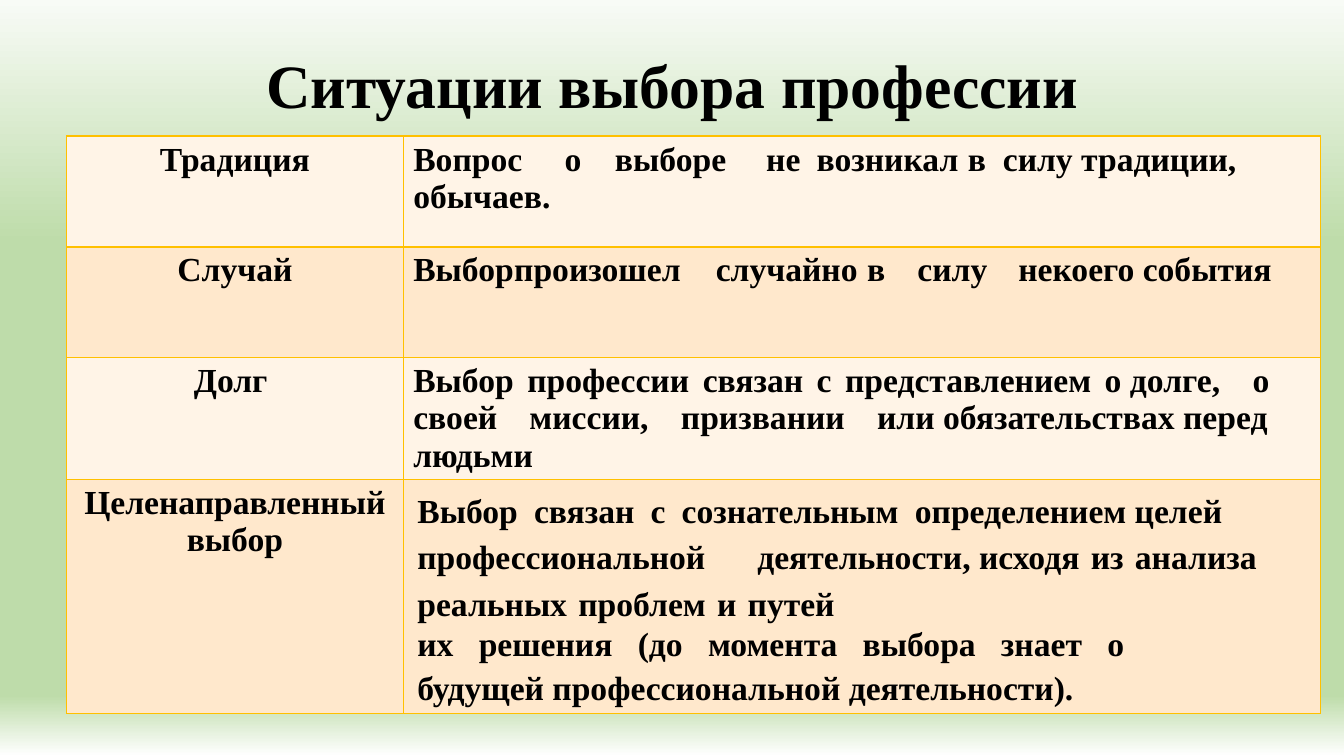
from lxml import etree
from pptx import Presentation
from pptx.dml.color import RGBColor
from pptx.enum.text import MSO_ANCHOR, PP_ALIGN
from pptx.oxml import parse_xml
from pptx.oxml.ns import qn
from pptx.util import Inches, Pt

COLORS = {
    "text": "000000", "border": "FFC000", "light": "FFF4E7", "dark": "FFE8CC",
    "top": "F8FBF6", "green": "BEDCAA", "bottom": "FFFFFF",
}
NAMESPACE = "http://schemas.openxmlformats.org/drawingml/2006/main"

# Each situation: name, row height, paragraphs.
# A paragraph is a list of (extra points per word gap, phrase).
SITUATIONS = [
    ("Традиция", 1.1, [
        [(0, "Вопрос\tо\tвыборе\tне\tвозникал\tв"), (6, " "), (0, "силу традиции, обычаев.")],
    ]),
    ("Случай", 1.1, [
        [(0, "Выбор\tпроизошел\tслучайно\tв\tсилу\tнекоего события")],
    ]),
    ("Долг ", 1.2, [
        [(3.6, "Выбор профессии связан с представлением о"), (0, " долге,"),
         (17, " о своей миссии, призвании или"), (0, " обязательствах перед людьми")],
    ]),
    ("Целенаправленный выбор", 2.32, [
        [(5.5, "Выбор связан с сознательным определением"), (0, " целей"),
         (31, " профессиональной деятельности,"), (0, " исходя"),
         (2, " из анализа реальных проблем и путей")],
        [(12, "их решения (до момента выбора знает о")],
        [(0, "будущей профессиональной деятельности).")],
    ]),
]
# Space before and line spacing of the paragraphs in the last row
GOAL_SPACING = [(1.4, Pt(33.1)), (2.5, None), (4.3, None)]


class SlideBuilder:
    def __init__(self, deck, font):
        self.page = deck.slides.add_slide(deck.slide_layouts[5])
        self.font = font

    def format_span(self, span, size):
        span.font.name = self.font
        span.font.size = Pt(size)
        span.font.bold = True
        span.font.color.rgb = RGBColor.from_string(COLORS["text"])

    def background(self, stops):
        fill = self.page.background.fill
        fill.gradient()
        gradient = self.page.background._cSld.find(".//" + qn("a:gradFill"))
        for child in list(gradient):
            gradient.remove(child)
        stop_list = etree.SubElement(gradient, qn("a:gsLst"))
        for percent, color in stops:
            stop = etree.SubElement(stop_list, qn("a:gs"), pos=str(percent * 1000))
            etree.SubElement(stop, qn("a:srgbClr"), val=COLORS[color])
        etree.SubElement(gradient, qn("a:lin"), ang="5400000", scaled="0")

    def title(self, text, left, top, width, height):
        box = self.page.shapes.title
        box.left, box.top = Inches(left), Inches(top)
        box.width, box.height = Inches(width), Inches(height)
        box.text_frame.text = text
        box.text_frame.vertical_anchor = MSO_ANCHOR.MIDDLE
        para = box.text_frame.paragraphs[0]
        para.alignment = PP_ALIGN.CENTER
        para.line_spacing = 0.9
        self.format_span(para.runs[0], 44)

    def add_span(self, para, text, gap=0):
        span = para.add_run()
        span.text = text
        self.format_span(span, 24)
        if gap:
            span.font._element.set("spc", str(round(gap * 100)))

    def add_phrase(self, para, gap, phrase):
        if not gap:
            self.add_span(para, phrase)
            return
        for index, word in enumerate(phrase.split(" ")):
            if index:
                self.add_span(para, " ", gap)
            if word:
                self.add_span(para, word)

    def style_cell(self, cell, color):
        properties = cell._tc.get_or_add_tcPr()
        for side in ("lnL", "lnR", "lnT", "lnB"):
            properties.append(parse_xml(
                f'<a:{side} xmlns:a="{NAMESPACE}" w="12700"><a:solidFill>'
                f'<a:srgbClr val="{COLORS["border"]}"/></a:solidFill></a:{side}>'))
        cell.fill.solid()
        cell.fill.fore_color.rgb = RGBColor.from_string(COLORS[color])

    def table(self, situations, left, top, column_widths):
        height = sum(row_height for _, row_height, _ in situations)
        table = self.page.shapes.add_table(
            len(situations), len(column_widths), Inches(left), Inches(top),
            Inches(sum(column_widths)), Inches(height)).table
        table.first_row = False
        for column, width in zip(table.columns, column_widths):
            column.width = Inches(width)
        for index, (name, row_height, paragraphs) in enumerate(situations):
            table.rows[index].height = Inches(row_height)
            name_cell, text_cell = table.rows[index].cells
            for cell in (name_cell, text_cell):
                self.style_cell(cell, "dark" if index % 2 else "light")
            para = name_cell.text_frame.paragraphs[0]
            para.alignment = PP_ALIGN.CENTER
            self.add_span(para, name)
            self.fill_text(text_cell.text_frame, paragraphs)

    def fill_text(self, frame, paragraphs):
        for index, phrases in enumerate(paragraphs):
            para = frame.add_paragraph() if index else frame.paragraphs[0]
            for gap, phrase in phrases:
                self.add_phrase(para, gap, phrase)
            if len(paragraphs) > 1:
                before, line_spacing = GOAL_SPACING[index]
                para.space_before = Pt(before)
                para.line_spacing = line_spacing
                para._p.get_or_add_pPr().set("marL", str(Inches(0.04)))


def main():
    deck = Presentation()
    deck.slide_width, deck.slide_height = Inches(13.33), Inches(7.5)
    slide = SlideBuilder(deck, "Times New Roman")

    # Background and heading
    slide.background([(0, "top"), (32, "green"), (92, "green"), (100, "bottom")])
    slide.title("Ситуации выбора профессии", 0.92, 0.4, 11.5, 0.95)

    # Table of situations
    slide.table(SITUATIONS, 0.66, 1.35, [3.34, 9.1])

    deck.save("out.pptx")


if __name__ == "__main__":
    main()
